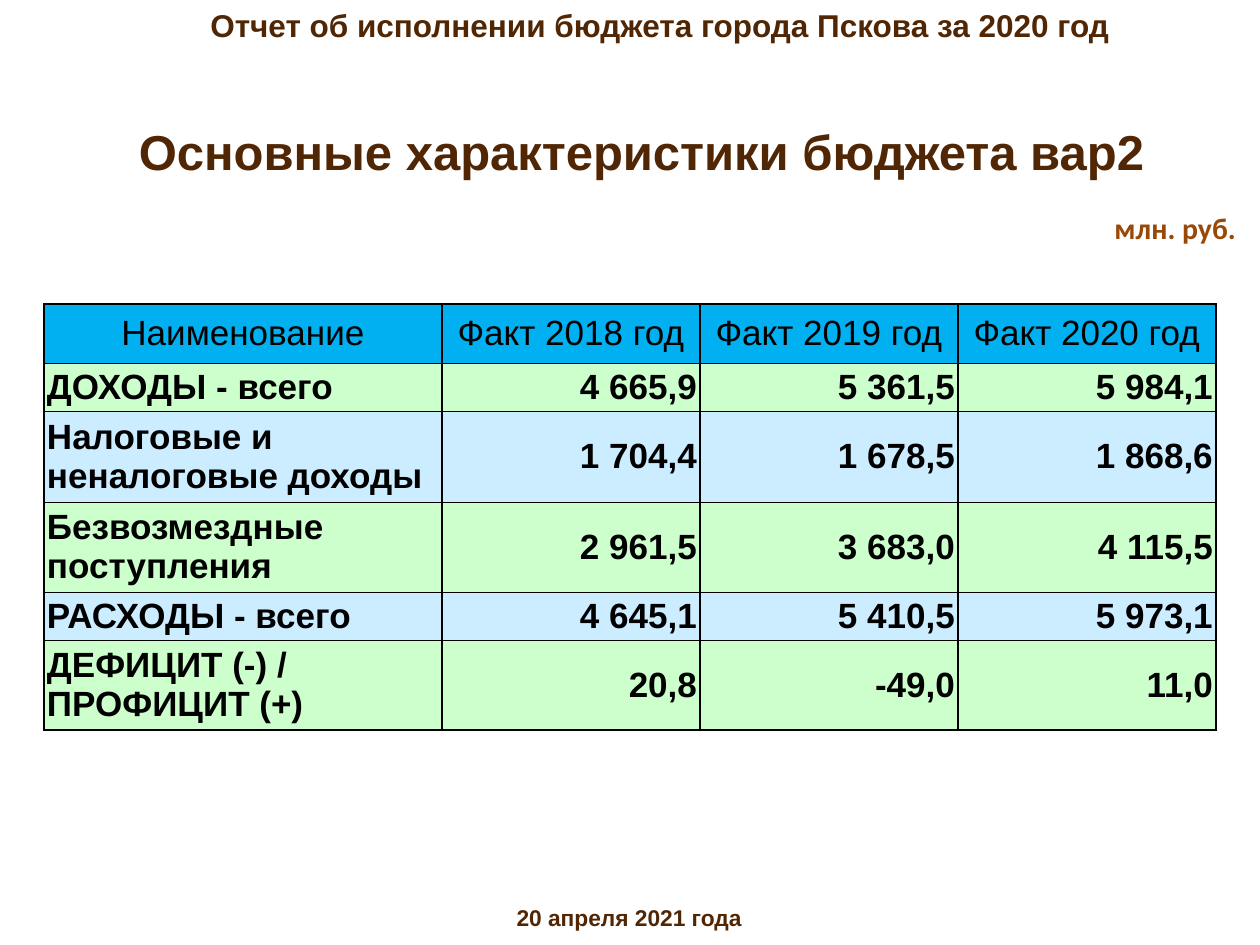
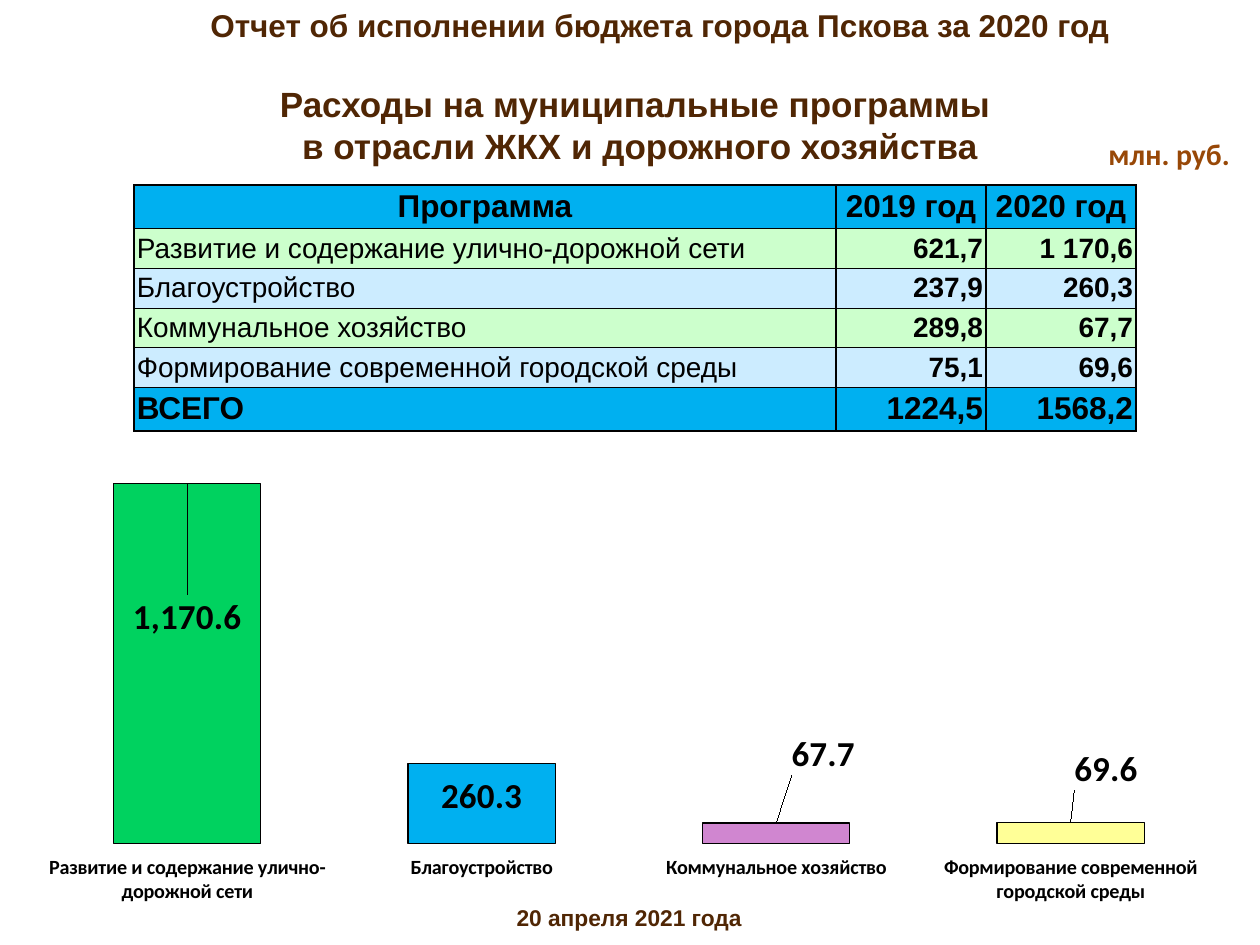
from dataclasses import dataclass

from lxml.etree import SubElement
from pptx import Presentation
from pptx.chart.data import CategoryChartData
from pptx.dml.color import RGBColor
from pptx.enum.chart import XL_CHART_TYPE as ChartType
from pptx.enum.chart import XL_LABEL_POSITION as LabelPosition
from pptx.enum.chart import XL_TICK_LABEL_POSITION as TickLabels
from pptx.enum.chart import XL_TICK_MARK as TickMark
from pptx.enum.text import MSO_ANCHOR as Anchor
from pptx.enum.text import MSO_AUTO_SIZE as AutoSize
from pptx.enum.text import PP_ALIGN as Align
from pptx.oxml import parse_xml
from pptx.oxml.ns import nsdecls, qn
from pptx.util import Emu, Pt

PX = 914400 / 126


@dataclass(frozen=True)
class Theme:
    heading: str = "502604"
    unit: str = "984807"
    ink: str = "000000"
    accent: str = "00B0F0"
    stripes: tuple = ("CCFFCC", "CCECFF")
    bars: tuple = ("00D25F", "00B0F0", "D086D0", "FFFF97")
    font: str = "Arial"
    unit_font: str = "Calibri"
    title_size: int = 28
    subtitle_size: int = 20
    header_size: int = 18
    footer_size: int = 13
    unit_size: int = 17
    table_size: int = 20
    total_size: int = 18
    program_size: int = 16
    category_size: float = 11.5
    value_size: int = 20


THEME = Theme()
NUMBER_FORMAT = "#,##0.0"
BUDGET_ROWS = [
    ("Наименование", "Факт 2018 год", "Факт 2019 год", "Факт 2020 год"),
    ("ДОХОДЫ - всего", "4 665,9", "5 361,5", "5 984,1"),
    ("Налоговые и неналоговые доходы", "1 704,4", "1 678,5", "1 868,6"),
    ("Безвозмездные поступления", "2 961,5", "3 683,0", "4 115,5"),
    ("РАСХОДЫ - всего", "4 645,1", "5 410,5", "5 973,1"),
    ("ДЕФИЦИТ (-) / ПРОФИЦИТ (+)", "20,8", "-49,0", "11,0"),
]
PROGRAM_ROWS = [
    ("Программа", "2019 год", "2020 год"),
    ("Развитие и содержание улично-дорожной сети", "621,7", "1 170,6"),
    ("Благоустройство", "237,9", "260,3"),
    ("Коммунальное хозяйство", "289,8", "67,7"),
    ("Формирование современной городской среды", "75,1", "69,6"),
    ("ВСЕГО", "1224,5", "1568,2"),
]
PROGRAM_VALUES = (1170.6, 260.3, 67.7, 69.6)
LABEL_SHIFTS = ((0, 0.3), (0, 0.11), (0.04, -0.08), (0.03, -0.05))


def px(length):
    return Emu(round(length * PX))


def rgb(color):
    return RGBColor.from_string(color)


def style_font(font, size, color, bold=True, name=THEME.font):
    font.size = Pt(size)
    font.color.rgb = rgb(color)
    font.bold = bold
    font.name = name


def write(text_frame, text, align, size, color, bold=True, name=THEME.font):
    text_frame.text = text
    for paragraph in text_frame.paragraphs:
        paragraph.alignment = align
        for run in paragraph.runs:
            style_font(run.font, size, color, bold, name)


def add_label(slide, text, box, align, size, color, name=THEME.font, wrap=True):
    shape = slide.shapes.add_textbox(*map(px, box))
    shape.text_frame.word_wrap = wrap
    write(shape.text_frame, text, align, size, color, name=name)
    return shape


def add_report_slide(presentation, title, title_box, title_size, unit_corner):
    slide = presentation.slides.add_slide(presentation.slide_layouts[5])
    header = add_label(slide, "Отчет об исполнении бюджета города Пскова за 2020 год",
                       (0, 0, 1260, 50), Align.LEFT, THEME.header_size, THEME.heading)
    header.text_frame.paragraphs[0]._p.get_or_add_pPr().set("marL", str(px(198)))
    add_label(slide, "20 апреля 2021 года", (-1, 898, 1260, 40),
              Align.CENTER, THEME.footer_size, THEME.heading)
    heading = slide.shapes.title
    heading.left, heading.top, heading.width, heading.height = map(px, title_box)
    heading.text_frame.auto_size = AutoSize.NONE
    heading.text_frame.word_wrap = False
    heading.text_frame.vertical_anchor = Anchor.MIDDLE
    write(heading.text_frame, title, Align.CENTER, title_size, THEME.heading)
    add_label(slide, "млн. руб.", (*unit_corner, 147, 49), Align.LEFT,
              THEME.unit_size, THEME.unit, THEME.unit_font, wrap=False)
    return slide


def set_borders(cell, widths):
    properties = cell._tc.get_or_add_tcPr()
    for side, width in zip("LRTB", widths):
        line = SubElement(properties, qn(f"a:ln{side}"), w=str(Pt(width)))
        fill = SubElement(line, qn("a:solidFill"))
        SubElement(fill, qn("a:srgbClr"), val=THEME.ink)


def add_data_table(slide, rows, corner, widths, heights, cell_style):
    box = (*corner, sum(widths), sum(heights))
    table = slide.shapes.add_table(len(rows), len(widths), *map(px, box)).table
    for column, width in zip(table.columns, widths):
        column.width = px(width)
    for row, height in zip(table.rows, heights):
        row.height = px(height)
    last = len(rows) - 1
    for r, texts in enumerate(rows):
        for c, text in enumerate(texts):
            cell = table.cell(r, c)
            set_borders(cell, (1, 1, 1 if r == 0 else 0.5, 1 if r == last else 0.5))
            size, bold, fill = cell_style(r, c)
            cell.fill.solid()
            cell.fill.fore_color.rgb = rgb(fill)
            cell.margin_left = cell.margin_right = px(3)
            cell.margin_top = cell.margin_bottom = px(3)
            cell.vertical_anchor = Anchor.MIDDLE
            align = Align.CENTER if r == 0 else Align.RIGHT if c else Align.LEFT
            write(cell.text_frame, text, align, size, THEME.ink, bold)


def stripe(row):
    return THEME.stripes[(row - 1) % 2]


def budget_style(row, column):
    return THEME.table_size, row > 0, stripe(row) if row else THEME.accent


def program_style(row, column):
    if row in (0, len(PROGRAM_ROWS) - 1):
        return THEME.total_size, True, THEME.accent
    return THEME.program_size, column > 0, stripe(row)


def manual_layout(**settings):
    items = "".join(f'<c:{key} val="{value}"/>' for key, value in settings.items())
    return parse_xml(f'<c:layout {nsdecls("c")}><c:manualLayout>{items}'
                     '</c:manualLayout></c:layout>')


def set_plot_area(chart):
    plot_area = chart.element.find(".//" + qn("c:plotArea"))
    for layout in plot_area.findall(qn("c:layout")):
        plot_area.remove(layout)
    plot_area.insert(0, manual_layout(layoutTarget="inner", xMode="edge", yMode="edge",
                                      x=0, y=0, w=1, h=0.81))


def style_bars(series):
    for index, (color, shift) in enumerate(zip(THEME.bars, LABEL_SHIFTS)):
        point = series.points[index]
        point.format.fill.solid()
        point.format.fill.fore_color.rgb = rgb(color)
        point.format.line.color.rgb = rgb(THEME.ink)
        point.format.line.width = Pt(0.75)
        label = point.data_label
        style_font(label.font, THEME.value_size, THEME.ink, name=THEME.unit_font)
        label.position = LabelPosition.OUTSIDE_END
    label_elements = series._element.iter(qn("c:dLbl"))
    for element, (x, y) in zip(list(label_elements), LABEL_SHIFTS):
        index_element = element.find(qn("c:idx"))
        index_element.addnext(parse_xml(
            f'<c:numFmt {nsdecls("c")} formatCode="{NUMBER_FORMAT}" sourceLinked="0"/>'))
        index_element.addnext(manual_layout(x=x, y=y))


def add_program_chart(slide, box):
    data = CategoryChartData(number_format=NUMBER_FORMAT)
    data.categories = [row[0] for row in PROGRAM_ROWS[1:-1]]
    data.add_series("Series 1", PROGRAM_VALUES)
    chart = slide.shapes.add_chart(ChartType.COLUMN_CLUSTERED, *map(px, box), data).chart
    chart.has_title = False
    chart.has_legend = False
    style_font(chart.font, 10, THEME.ink, False, THEME.unit_font)
    category_axis = chart.category_axis
    category_axis.major_tick_mark = TickMark.NONE
    category_axis.tick_label_position = TickLabels.LOW
    category_axis.format.line.fill.background()
    style_font(category_axis.tick_labels.font, THEME.category_size, THEME.ink,
               name=THEME.unit_font)
    value_axis = chart.value_axis
    value_axis.minimum_scale = 0
    value_axis.maximum_scale = 1400
    value_axis.has_major_gridlines = False
    value_axis.visible = False
    plot = chart.plots[0]
    plot.vary_by_categories = False
    plot.gap_width = 100
    set_plot_area(chart)
    style_bars(plot.series[0])


def main():
    presentation = Presentation()
    presentation.slide_width, presentation.slide_height = px(1260), px(945)

    budget = add_report_slide(presentation, "Основные характеристики бюджета вар2",
                              (120, 115, 1043, 72), THEME.title_size, (1102, 204))
    add_data_table(budget, BUDGET_ROWS, (44, 304), (398, 258, 258, 258),
                   (59, 47, 91, 89, 47, 89), budget_style)

    programs = add_report_slide(
        presentation,
        "Расходы на муниципальные программы \vв отрасли ЖКХ и дорожного хозяйства",
        (264, 76, 752, 97), THEME.subtitle_size, (1096, 130))
    add_data_table(programs, PROGRAM_ROWS, (134, 185), (702, 150, 150),
                   (42, 39, 39, 39, 39, 42), program_style)
    add_program_chart(programs, (40, 413, 1178, 532))

    presentation.save("out.pptx")


if __name__ == "__main__":
    main()
